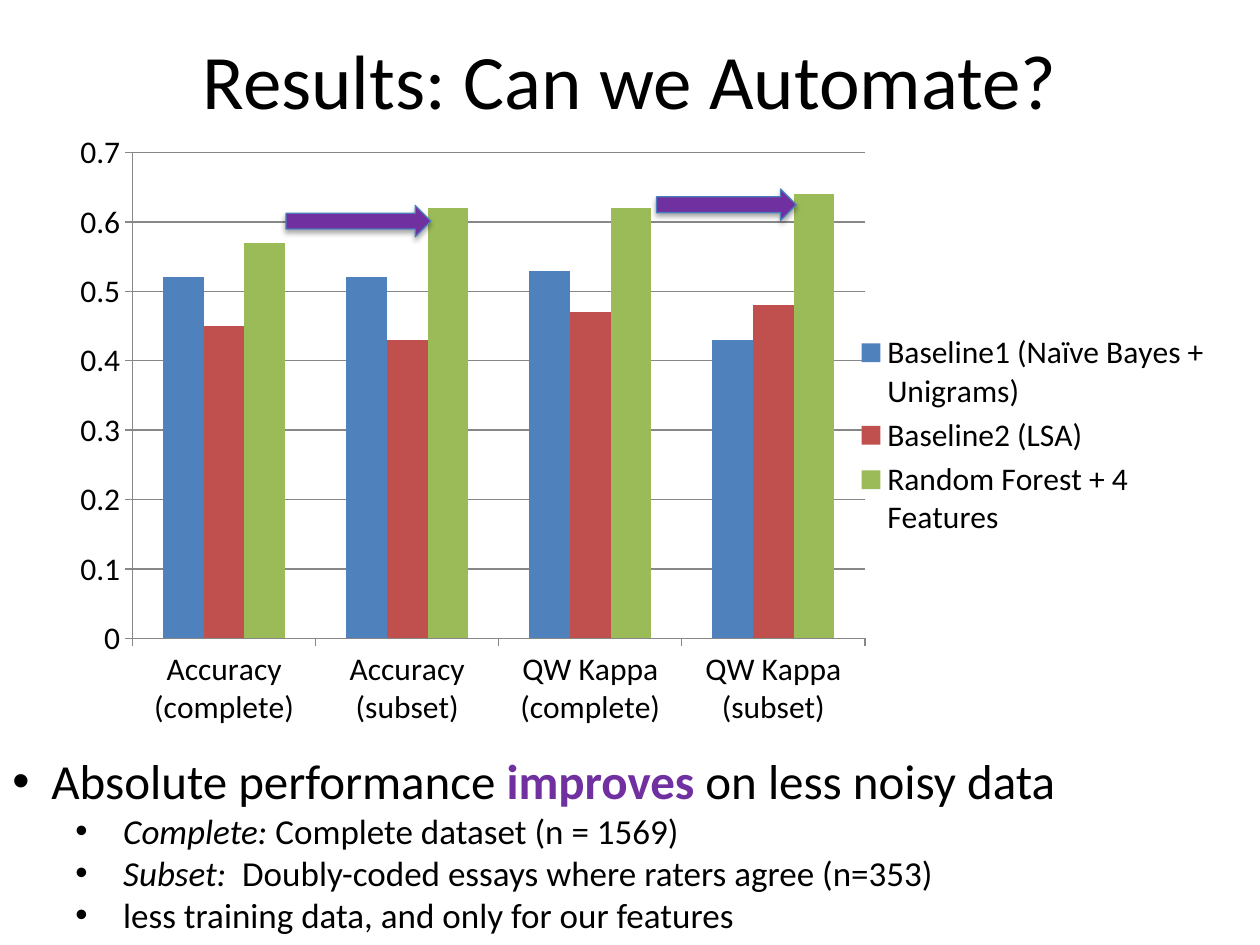
"""Build a results slide with a clustered column chart, arrows and bullets."""
from lxml import etree
from pptx import Presentation
from pptx.chart.data import CategoryChartData
from pptx.dml.color import RGBColor
from pptx.enum import chart as charts, shapes, text
from pptx.oxml import parse_xml
from pptx.oxml.ns import nsdecls, qn
from pptx import util as u

COLORS = {
    "text": "000000",
    "accent": "7030A0",
    "outline": "4B7EBC",
    "axis": "878787",
    "baseline1": "4F81BD",
    "baseline2": "C0504D",
    "forest": "9BBB59",
}
FONT = "Calibri"
CATEGORIES = ["Accuracy (complete)", "Accuracy (subset)",
              "QW Kappa (complete)", "QW Kappa (subset)"]
SERIES = [
    ("Baseline1 (Naïve Bayes + Unigrams)", (0.52, 0.52, 0.53, 0.43), "baseline1"),
    ("Baseline2 (LSA)", (0.45, 0.43, 0.47, 0.48), "baseline2"),
    ("Random Forest + 4 Features", (0.57, 0.62, 0.62, 0.64), "forest"),
]
PLOT_AREA = {"x": 0.071, "y": 0.045, "w": 0.623, "h": 0.782}
ITALIC = {"italic": True}
BULLETS = [
    (0, 28, [("Absolute performance ", {}),
             ("improves", {"bold": True, "color": "accent"}),
             (" on less noisy data", {})]),
    (1, 20, [("Complete: ", ITALIC), ("Complete dataset (n = 1569)", {})]),
    (1, 20, [("Subset:  ", ITALIC),
             ("Doubly-coded essays where raters agree (n=353)", {})]),
    (1, 20, [("less training data, and only for our features", {})]),
]
INDENTS = [(0.31, -0.31), (0.88, -0.38)]
ARROWS = [(2.27, 1.63, 1.15, 0.25), (5.21, 1.5, 1.11, 0.25)]


def rgb(name):
    """Return the named colour."""
    return RGBColor.from_string(COLORS[name])


def assign(target, values):
    """Set each attribute in values on the target."""
    for name, value in values.items():
        setattr(target, name, value)


class SlideBuilder:
    """Hold the style and the current slide."""

    def __init__(self, presentation, font):
        """Add a blank slide and remember the font."""
        self.slide = presentation.slides.add_slide(presentation.slide_layouts[6])
        self.font = font

    def style_font(self, font, size, color="text", **values):
        """Apply the typeface, size, colour and extra values to a font."""
        assign(font, {"name": self.font, "size": u.Pt(size), **values})
        font.color.rgb = rgb(color)

    def text_frame(self, box, **values):
        """Add a wrapping text box and return its frame."""
        frame = self.slide.shapes.add_textbox(*map(u.Inches, box)).text_frame
        assign(frame, {"word_wrap": True, **values})
        return frame

    def runs(self, paragraph, size, parts):
        """Add formatted runs to a paragraph."""
        for wording, values in parts:
            run = paragraph.add_run()
            run.text = wording
            self.style_font(run.font, size, **values)

    def title(self, box, wording):
        """Add the centred slide title."""
        frame = self.text_frame(box, vertical_anchor=text.MSO_ANCHOR.MIDDLE)
        paragraph = frame.paragraphs[0]
        paragraph.alignment = text.PP_ALIGN.CENTER
        self.runs(paragraph, 44, [(wording, {})])

    def bullets(self, box, items):
        """Add a bulleted list with two levels."""
        frame = self.text_frame(box, auto_size=text.MSO_AUTO_SIZE.SHAPE_TO_FIT_TEXT)
        for index, (level, size, parts) in enumerate(items):
            paragraph = frame.add_paragraph() if index else frame.paragraphs[0]
            paragraph.level = level
            self.runs(paragraph, size, parts)
            properties = paragraph._p.get_or_add_pPr()
            for name, length in zip(("marL", "indent"), INDENTS[level]):
                properties.set(name, str(u.Inches(length)))
            etree.SubElement(properties, qn("a:buFont"), typeface="Arial")
            etree.SubElement(properties, qn("a:buChar"), char="•")

    def column_chart(self, box, categories, series, plot_area):
        """Add a clustered column chart with a legend on the right."""
        data = CategoryChartData()
        data.categories = categories
        for name, values, _ in series:
            data.add_series(name, values)
        chart = self.slide.shapes.add_chart(
            charts.XL_CHART_TYPE.COLUMN_CLUSTERED, *map(u.Inches, box), data).chart
        self.style_font(chart.font, 18)
        assign(chart, {"has_title": False, "has_legend": True})
        assign(chart.legend, {"position": charts.XL_LEGEND_POSITION.RIGHT,
                              "include_in_layout": False})
        plot = chart.plots[0]
        assign(plot, {"gap_width": 150, "overlap": 0, "vary_by_categories": False})
        for column, (_, _, color) in zip(plot.series, series):
            column.format.fill.solid()
            column.format.fill.fore_color.rgb = rgb(color)
        value_axis, category_axis = chart.value_axis, chart.category_axis
        assign(value_axis, {"minimum_scale": 0, "maximum_scale": 0.7,
                            "major_unit": 0.1, "has_major_gridlines": True})
        for axis in (value_axis, category_axis):
            axis.major_tick_mark = charts.XL_TICK_MARK.OUTSIDE
        for part in (value_axis, category_axis, value_axis.major_gridlines):
            part.format.line.width = u.Pt(0.75)
            part.format.line.color.rgb = rgb("axis")
        self.place_plot(chart, plot_area)

    def place_plot(self, chart, plot_area):
        """Fix the inner plot area as fractions of the chart."""
        area = chart._chartSpace.chart.plotArea
        for layout in area.findall(qn("c:layout")):
            area.remove(layout)
        layout = etree.Element(qn("c:layout"))
        manual = etree.SubElement(layout, qn("c:manualLayout"))
        settings = {"layoutTarget": "inner", "xMode": "edge", "yMode": "edge", **plot_area}
        for name, value in settings.items():
            etree.SubElement(manual, qn(f"c:{name}"), val=str(value))
        area.insert(0, layout)

    def arrow(self, box):
        """Add a right arrow with a soft shadow below it."""
        shape = self.slide.shapes.add_shape(
            shapes.MSO_SHAPE.RIGHT_ARROW, *map(u.Inches, box))
        shape.fill.solid()
        shape.fill.fore_color.rgb = rgb("accent")
        shape.line.color.rgb = rgb("outline")
        shape.line.width = u.Pt(0.75)
        shape.shadow.inherit = False
        shape._element.spPr.find(qn("a:effectLst")).append(parse_xml(
            f'<a:outerShdw {nsdecls("a")} blurRad="{u.Pt(3.1)}" dist="{u.Pt(1.8)}" '
            f'dir="5400000" rotWithShape="0"><a:srgbClr val="{COLORS["text"]}">'
            '<a:alpha val="35000"/></a:srgbClr></a:outerShdw>'))


def main():
    """Build and save the presentation."""
    presentation = Presentation()
    assign(presentation, {"slide_width": u.Inches(10), "slide_height": u.Inches(7.5)})
    builder = SlideBuilder(presentation, FONT)
    builder.title((0.5, 0, 9, 1.25), "Results: Can we Automate?")
    builder.column_chart((0.39, 0.99, 9.33, 4.93), CATEGORIES, SERIES, PLOT_AREA)
    builder.bullets((0, 5.91, 10, 1.58), BULLETS)
    for box in ARROWS:
        builder.arrow(box)
    presentation.save("out.pptx")


if __name__ == "__main__":
    main()
